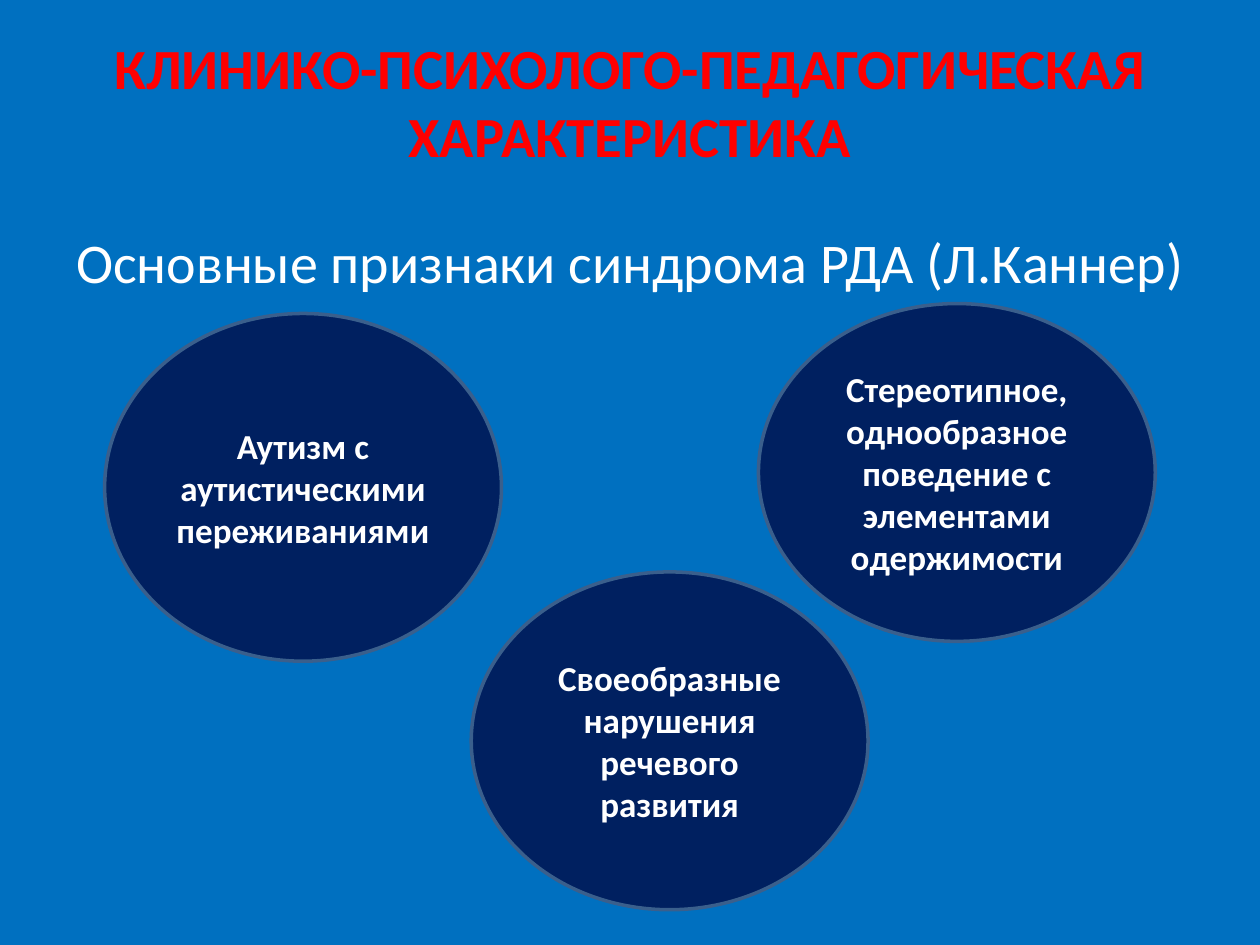
"""Build a slide on the main signs of early childhood autism."""
from dataclasses import dataclass

from lxml.etree import SubElement
from pptx import Presentation
from pptx.dml.color import RGBColor as RGB
from pptx.enum.shapes import MSO_SHAPE as SHAPE
from pptx.enum.text import MSO_ANCHOR as ANCHOR, MSO_AUTO_SIZE as AUTO, PP_ALIGN as ALIGN
from pptx.oxml.ns import qn
from pptx.util import Cm, Pt

TITLE = "КЛИНИКО-ПСИХОЛОГО-ПЕДАГОГИЧЕСКАЯ ХАРАКТЕРИСТИКА"
TITLE_BOX = (1.27, 0.53, 22.86, 3)
LEAD = "Основные признаки синдрома РДА (Л.Каннер)"
LEAD_BOX = (0.71, 4.45, 24, 12.57)
SIGN_WIDTH = 8
SIGNS = [
    ("Аутизм с аутистическими переживаниями", 2.11, 6.32, 7.01),
    ("Своеобразные нарушения речевого развития", 9.5, 11.53, 6.81),
    ("Стереотипное, однообразное поведение с элементами одержимости", 15.29, 6.12, 6.81),
]


@dataclass(frozen=True)
class Theme:
    font: str = "Calibri"
    back: RGB = RGB(0x00, 0x70, 0xC0)
    title: RGB = RGB(0xFF, 0x00, 0x00)
    text: RGB = RGB(0xFF, 0xFF, 0xFF)
    fill: RGB = RGB(0x00, 0x20, 0x60)
    line: RGB = RGB(0x3A, 0x5F, 0x8C)
    title_size: float = 32.4
    lead_size: float = 32
    sign_size: float = 20
    line_width: float = 2


THEME = Theme()


def write(sp, text, size, color, bold, anchor):
    tf = sp.text_frame
    tf.text = text
    tf.word_wrap = True
    tf.auto_size = AUTO.NONE
    tf.vertical_anchor = anchor
    p = tf.paragraphs[0]
    p.alignment = ALIGN.CENTER
    font = p.runs[0].font
    font.name, font.size, font.bold = THEME.font, Pt(size), bold
    font.color.rgb = color
    return p


def place(sp, box):
    sp.left, sp.top, sp.width, sp.height = map(Cm, box)


def add_sign(s, text, left, top, height):
    box = map(Cm, (left, top, SIGN_WIDTH, height))
    sp = s.shapes.add_shape(SHAPE.FLOWCHART_CONNECTOR, *box)
    sp.shadow.inherit = False
    sp.fill.solid()
    sp.fill.fore_color.rgb = THEME.fill
    sp.line.color.rgb = THEME.line
    sp.line.width = Pt(THEME.line_width)
    write(sp, text, THEME.sign_size, THEME.text, True, ANCHOR.MIDDLE)


def main():
    prs = Presentation()
    prs.slide_width, prs.slide_height = Cm(25.4), Cm(19.05)
    s = prs.slides.add_slide(prs.slide_layouts[1])
    s.background.fill.solid()
    s.background.fill.fore_color.rgb = THEME.back

    title, body = s.placeholders
    place(title, TITLE_BOX)
    write(title, TITLE, THEME.title_size, THEME.title, True, ANCHOR.MIDDLE)
    place(body, LEAD_BOX)
    p = write(body, LEAD, THEME.lead_size, THEME.text, False, ANCHOR.TOP)
    pPr = p._p.get_or_add_pPr()
    pPr.set("marL", "0")
    pPr.set("indent", "0")
    SubElement(pPr, qn("a:buNone"))

    for sign in SIGNS:
        add_sign(s, *sign)
    prs.save("out.pptx")


if __name__ == "__main__":
    main()
